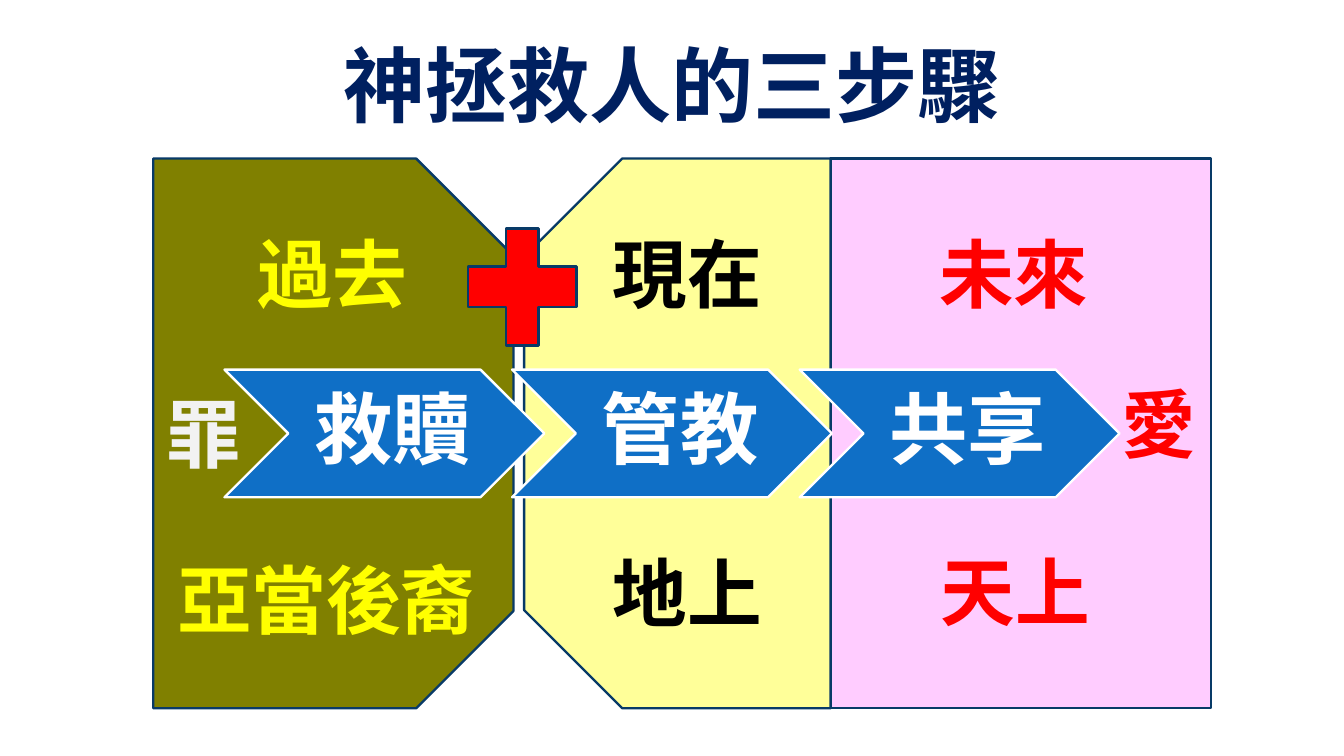
"""Build a one-slide diagram of three steps across past, present and future."""
from pptx import Presentation
from pptx.dml.color import RGBColor
from pptx.enum.shapes import MSO_SHAPE
from pptx.enum.text import MSO_ANCHOR, PP_ALIGN
from pptx.util import Inches, Pt

COLORS = {
    "navy": "002060", "edge": "083A67", "blue": "0F6FC6", "white": "FFFFFF",
    "pale": "F2F2F2", "black": "000000", "red": "FF0000", "yellow": "FFFF00",
    "olive": "808000", "cream": "FFFF99", "pink": "FFCCFF",
}
TITLE = "神拯救人的三步驟"
PANELS = [
    (MSO_SHAPE.RECTANGLE, 6.18, 2.83, 0, None, "pink"),
    (MSO_SHAPE.SNIP_2_SAME_RECTANGLE, 3.9, 2.28, 270, 0.32, "cream"),
    (MSO_SHAPE.SNIP_2_SAME_RECTANGLE, 1.14, 2.68, 90, 0.27, "olive"),
]
LABELS = [
    ("罪", 1.14, 2.84, 0.76, "pale"),
    ("愛", 8.25, 2.76, 0.76, "red"),
    ("地上", 4.46, 4.02, 1.32, "black"),
    ("天上", 6.9, 4.01, 1.32, "red"),
    ("過去", 1.82, 1.65, 1.32, "yellow"),
    ("現在", 4.46, 1.65, 1.32, "black"),
    ("未來", 6.89, 1.65, 1.32, "red"),
    ("亞當後裔", 1.22, 4.07, 2.45, "yellow"),
]
STEPS = ["救贖", "管教", "共享"]
PANEL_TOP, PANEL_HEIGHT = 1.18, 4.09
STEP_LEFT, STEP_PITCH = 1.67, 2.14


def color(name):
    return RGBColor.from_string(COLORS[name])


def write(frame, text, size=40, ink="black", align=None, wrap=False,
          anchor=MSO_ANCHOR.TOP, spacing=None):
    frame.word_wrap = wrap
    frame.vertical_anchor = anchor
    paragraph = frame.paragraphs[0]
    paragraph.alignment = align
    paragraph.line_spacing = spacing
    run = paragraph.add_run()
    run.text = text
    run.font.name = "Calibri"
    run.font.size = Pt(size)
    run.font.bold = True
    run.font.color.rgb = color(ink)


def draw(slide, kind, box, fill, line="edge"):
    shape = slide.shapes.add_shape(kind, *map(Inches, box))
    shape.shadow.inherit = False
    shape.fill.solid()
    shape.fill.fore_color.rgb = color(fill)
    shape.line.color.rgb = color(line)
    shape.line.width = Pt(1.25)
    return shape


def add_panel(slide, kind, left, width, rotation, snip, fill):
    box = (left, PANEL_TOP, width, PANEL_HEIGHT)
    if rotation:
        shift = (PANEL_HEIGHT - width) / 2
        box = (left - shift, PANEL_TOP + shift, PANEL_HEIGHT, width)
    panel = draw(slide, kind, box, fill)
    panel.rotation = rotation
    if snip:
        panel.adjustments[0] = snip


def add_step(slide, index, text):
    box = (STEP_LEFT + index * STEP_PITCH, 2.75, 2.38, 0.95)
    frame = draw(slide, MSO_SHAPE.CHEVRON, box, "blue", "white").text_frame
    frame.margin_left = Inches(0.18)
    frame.margin_right = frame.margin_top = frame.margin_bottom = Inches(0.06)
    write(frame, text, size=42, ink="white", align=PP_ALIGN.CENTER, wrap=True,
          anchor=MSO_ANCHOR.MIDDLE, spacing=0.9)


def main():
    deck = Presentation()
    deck.slide_width = Inches(10)
    deck.slide_height = deck.slide_width * 9 // 16
    slide = deck.slides.add_slide(deck.slide_layouts[6])

    for panel in PANELS:
        add_panel(slide, *panel)

    title = slide.shapes.add_textbox(*map(Inches, (0.5, 0.21, 9, 1.03)))
    write(title.text_frame, TITLE, size=44, ink="navy",
          align=PP_ALIGN.CENTER, wrap=True)
    for text, left, top, width, ink in LABELS:
        label = slide.shapes.add_textbox(*map(Inches, (left, top, width, 0.77)))
        write(label.text_frame, text, ink=ink)

    cross = draw(slide, MSO_SHAPE.CROSS, (3.48, 1.7, 0.81, 0.87), "red")
    cross.adjustments[0] = 0.35
    for index, text in enumerate(STEPS):
        add_step(slide, index, text)

    deck.save("out.pptx")


if __name__ == "__main__":
    main()
